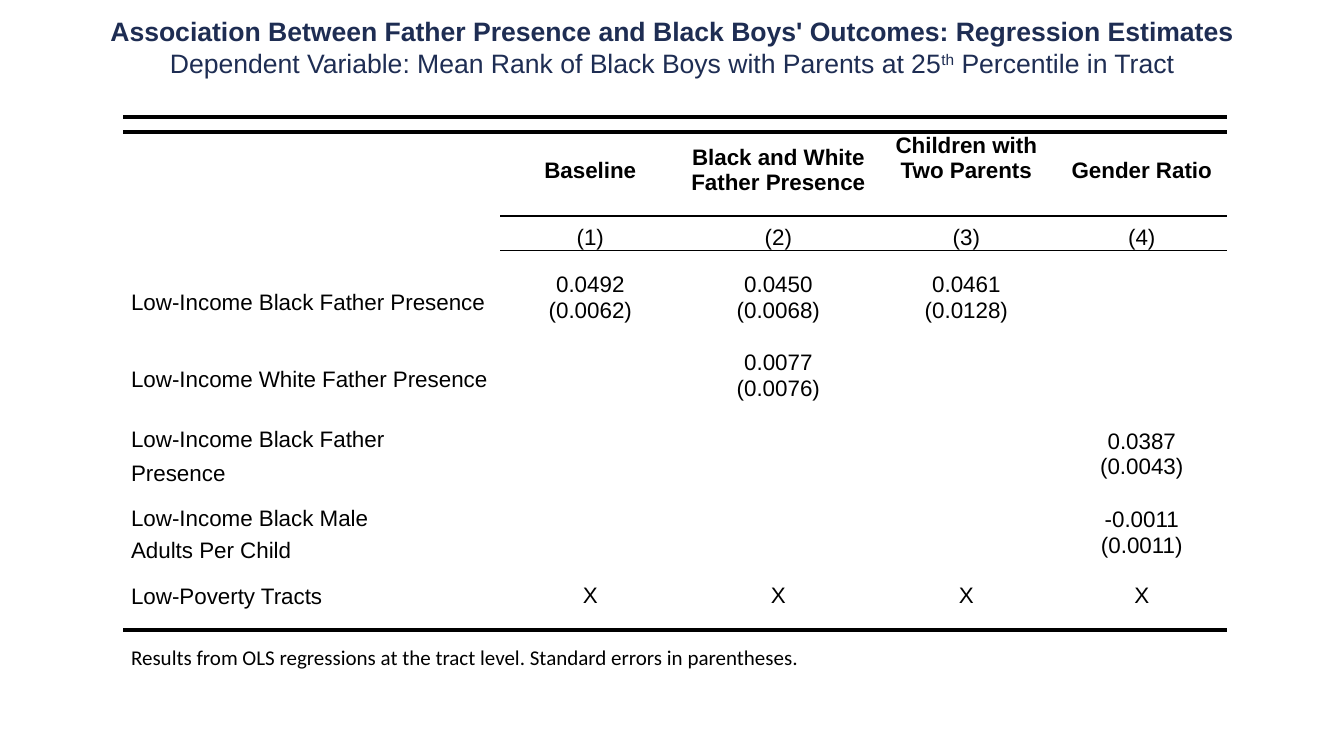
from lxml import etree
from pptx import Presentation
from pptx.dml.color import RGBColor
from pptx.enum import text
from pptx.oxml import ns
from pptx.util import Inches, Pt

NO_STYLE = "{2D5ABB26-0587-4C30-8999-92F81FD0307C}"
COLUMN_WIDTHS = [3.74, 1.79, 1.94, 1.79, 1.69]
ROW_HEIGHTS = [0.34, 0.15, 0.74, 0.08, 0.34, 0.17, 0.3, 0.36, 0.11, 0.3, 0.36,
               0.11, 0.31, 0.36, 0.11, 0.31, 0.33, 0.13, 0.33, 0.18, 0.99]
MODELS = ["Baseline", "Black and White Father Presence",
          "Children with Two Parents", "Gender Ratio"]
# First row, label lines, {column: (estimate, standard error)}
REGRESSORS = [
    (6, ["Low-Income Black Father Presence"],
     {1: ("0.0492", "(0.0062)"), 2: ("0.0450", "(0.0068)"), 3: ("0.0461", "(0.0128)")}),
    (9, ["Low-Income White Father Presence"], {2: ("0.0077", "(0.0076)")}),
    (12, ["Low-Income Black Father", "Presence"], {4: ("0.0387", "(0.0043)")}),
    (15, ["Low-Income Black Male", "Adults Per Child"], {4: ("-0.0011", "(0.0011)")}),
]
HEADER_ROW, NUMBER_ROW, TRACTS_ROW, NOTE_ROW = 2, 4, 18, 20
TOP, MIDDLE, BOTTOM = (text.MSO_ANCHOR.TOP, text.MSO_ANCHOR.MIDDLE, text.MSO_ANCHOR.BOTTOM)


def color(hex_value):
    return RGBColor.from_string(hex_value)


def add_run(paragraph, words, size, ink="000000", bold=False, face="Arial"):
    run = paragraph.add_run()
    run.text = words
    run.font.size = Pt(size)
    run.font.name = face
    run.font.bold = bold
    run.font.color.rgb = color(ink)
    return run


def set_margins(cell, left, top, right, bottom):
    cell.margin_left, cell.margin_top = Inches(left), Inches(top)
    cell.margin_right, cell.margin_bottom = Inches(right), Inches(bottom)


def clear_cell(cell):
    """White cell whose empty paragraph is too small to stretch a thin row."""
    cell.fill.solid()
    cell.fill.fore_color.rgb = color("FFFFFF")
    set_margins(cell, 0, 0, 0, 0)
    end = etree.SubElement(cell.text_frame.paragraphs[0]._p, ns.qn("a:endParaRPr"))
    end.set("sz", "100")


def write_value(cell, words, anchor, bold=False):
    set_margins(cell, 0.01, 0.01, 0.01, 0)
    cell.vertical_anchor = anchor
    paragraph = cell.text_frame.paragraphs[0]
    paragraph.alignment = text.PP_ALIGN.CENTER
    add_run(paragraph, words, 16, bold=bold)


def write_label(cell, words):
    set_margins(cell, 0.08, 0, 0.08, 0)
    cell.vertical_anchor = MIDDLE
    paragraph = cell.text_frame.paragraphs[0]
    paragraph.line_spacing = 1.15
    add_run(paragraph, words, 16)


def add_border(cell, side, width):
    line = etree.Element(ns.qn(f"a:ln{side}"), w=str(Pt(width)))
    fill = etree.SubElement(line, ns.qn("a:solidFill"))
    etree.SubElement(fill, ns.qn("a:srgbClr"), val="000000")
    cell._tc.get_or_add_tcPr().insert(0, line)


def rule_below(table, row, first_column, width):
    for column in range(first_column, len(COLUMN_WIDTHS)):
        add_border(table.cell(row, column), "B", width)
        add_border(table.cell(row + 1, column), "T", width)


def add_empty_table(slide):
    rows, columns = len(ROW_HEIGHTS), len(COLUMN_WIDTHS)
    frame = slide.shapes.add_table(rows, columns, Inches(1.22), Inches(0.82),
                                   Inches(sum(COLUMN_WIDTHS)), Inches(sum(ROW_HEIGHTS)))
    table = frame.table
    table.first_row = table.horz_banding = False
    table._tbl.tblPr.find(ns.qn("a:tableStyleId")).text = NO_STYLE
    for column, width in zip(table.columns, COLUMN_WIDTHS):
        column.width = Inches(width)
    for row, height in zip(table.rows, ROW_HEIGHTS):
        row.height = Inches(height)
    for cell in table.iter_cells():
        clear_cell(cell)
    return table


def fill_table(table):
    for column, model in enumerate(MODELS, 1):
        write_value(table.cell(HEADER_ROW, column), model, MIDDLE, bold=True)
        write_value(table.cell(NUMBER_ROW, column), f"({column})", BOTTOM)
        write_value(table.cell(TRACTS_ROW, column), "X", MIDDLE)
    table.cell(HEADER_ROW, 3).margin_bottom = Inches(0.25)
    write_label(table.cell(TRACTS_ROW, 0), "Low-Poverty Tracts")

    for row, label_lines, estimates in REGRESSORS:
        if len(label_lines) == 1:
            table.cell(row, 0).merge(table.cell(row + 1, 0))
        for offset, line in enumerate(label_lines):
            write_label(table.cell(row + offset, 0), line)
        for column, (estimate, error) in estimates.items():
            write_value(table.cell(row, column), estimate, BOTTOM)
            write_value(table.cell(row + 1, column), error, TOP)

    for row, last_column in ((0, 2), (1, 2), (19, 2), (NOTE_ROW, 4)):
        table.cell(row, 0).merge(table.cell(row, last_column))
    for row, first_column, width in ((0, 0, 3), (3, 1, 1), (19, 0, 3)):
        rule_below(table, row, first_column, width)


def write_note(cell):
    set_margins(cell, 0.08, 0.15, 0.08, 0)
    paragraph = cell.text_frame.paragraphs[0]
    add_run(paragraph, "Results from OLS regressions at the tract level. "
            "Standard errors in parentheses", 15, face="Calibri")
    add_run(paragraph, ".", 15, face="Calibri").font.italic = True


def write_title(title):
    title.left, title.top = Inches(0), Inches(0.1)
    title.width, title.height = Inches(13.33), Inches(0.74)
    frame = title.text_frame
    frame.auto_size = text.MSO_AUTO_SIZE.NONE
    frame.vertical_anchor = TOP
    heading, subheading = frame.paragraphs[0], frame.add_paragraph()
    heading.alignment = subheading.alignment = text.PP_ALIGN.CENTER
    navy = "1E2D53"
    add_run(heading, "Association Between Father Presence and Black Boys' Outcomes: "
            "Regression Estimates", 19, navy, bold=True)
    add_run(subheading, "Dependent Variable: Mean Rank of Black Boys with Parents at 25",
            19, navy)
    ordinal = add_run(subheading, "th", 19, navy)
    ordinal._r.get_or_add_rPr().set("baseline", "30000")
    add_run(subheading, " Percentile in Tract", 19, navy)


def main():
    deck = Presentation()
    deck.slide_width, deck.slide_height = Inches(13.33), Inches(7.5)
    slide = deck.slides.add_slide(deck.slide_layouts[5])
    write_title(slide.shapes.title)
    table = add_empty_table(slide)
    fill_table(table)
    write_note(table.cell(NOTE_ROW, 0))
    deck.save("out.pptx")


if __name__ == "__main__":
    main()
